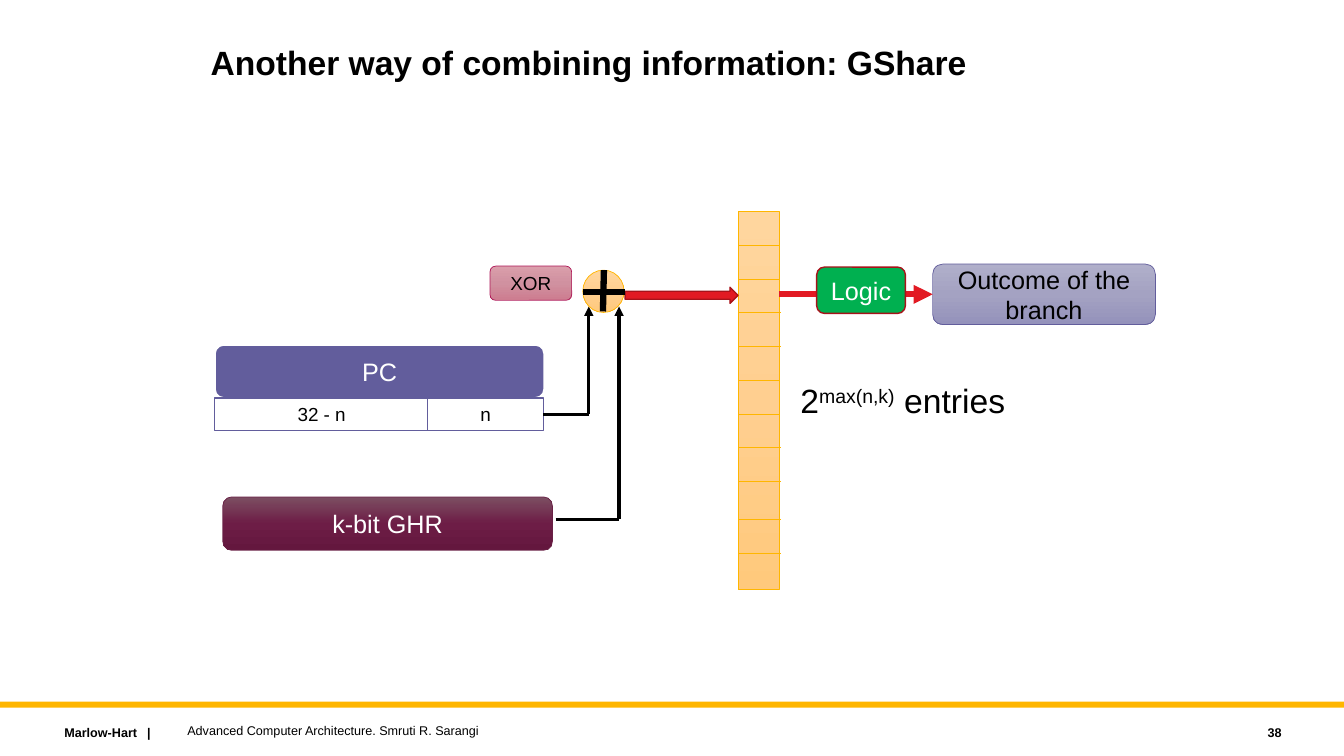
from copy import deepcopy

from lxml.etree import SubElement
from pptx import Presentation
from pptx.dml.color import RGBColor
from pptx.enum.shapes import MSO_CONNECTOR as CONN, MSO_SHAPE as SHAPE
from pptx.enum.text import MSO_ANCHOR as ANCHOR, PP_ALIGN as ALIGN
from pptx.oxml.ns import qn
from pptx.util import Inches, Pt

THEME = {
    "font": "Arial",
    "black": "000000", "white": "FFFFFF", "gold": "FFB600", "violet": "625D9C",
    "red": "E21A23", "dark_red": "A7131A", "green": "00B050",
    "plum": "692146", "pink": "AF1858",
    "gold_fade": ("FFD69E", "FFCF90", "FFC97C"),
    "violet_fade": ("B0AFCA", "A4A2C2", "9492BB"),
    "plum_fade": ("7C4F62", "6D1D46", "64173E"),
    "pink_fade": ("DA9EAB", "D091A0", "CD7C8F"),
    "title": 24, "label": 18, "small": 13.5, "footer": 9,
}


def add_box(kind, at, fill, line=None, width=0.5, text="", size="label", color="black"):
    s = slide.shapes.add_shape(kind, *map(Inches, at))
    s.shadow.inherit = False
    if isinstance(THEME[fill], tuple):
        s.fill.gradient()
        s.fill.gradient_angle = 270
        stop_list = s._element.spPr.find(".//" + qn("a:gsLst"))
        stop_list.insert(1, deepcopy(stop_list[0]))
        for stop, shade, place in zip(s.fill.gradient_stops, THEME[fill], (0, 0.5, 1)):
            stop.color.rgb = RGBColor.from_string(shade)
            stop.position = place
    else:
        s.fill.solid()
        s.fill.fore_color.rgb = RGBColor.from_string(THEME[fill])
    if line:
        s.line.color.rgb = RGBColor.from_string(THEME[line])
        s.line.width = Pt(width)
    else:
        s.line.fill.background()
    if text:
        tf = s.text_frame
        tf.word_wrap = True
        tf.vertical_anchor = ANCHOR.MIDDLE
        p = tf.paragraphs[0]
        p.text = text
        p.alignment = ALIGN.CENTER
        p.font.name = THEME["font"]
        p.font.size = Pt(THEME[size])
        p.font.color.rgb = RGBColor.from_string(THEME[color])
    return s


def add_line(start, end, color="black", width=2.25, arrow=False):
    c = slide.shapes.add_connector(CONN.STRAIGHT, *map(Inches, start + end))
    c.line.color.rgb = RGBColor.from_string(THEME[color])
    c.line.width = Pt(width)
    if arrow:
        SubElement(c.line._get_or_add_ln(), qn("a:tailEnd"), type="triangle")
    SubElement(c._element.spPr, qn("a:effectLst"))
    return c


prs = Presentation()
prs.slide_width, prs.slide_height = Inches(13.33), Inches(7.5)
slide = prs.slides.add_slide(prs.slide_layouts[6])

add_box(SHAPE.RECTANGLE, (0, 6.96, 13.33, 0.06), "gold")

add_box(SHAPE.ROUNDED_RECTANGLE, (2.13, 3.42, 3.27, 0.53), "violet", "white", 1.5,
        "PC", color="white")
add_box(SHAPE.RECTANGLE, (2.13, 3.95, 2.12, 0.32), "white", "violet", 1, "32 - n", "small")
low_bits = add_box(SHAPE.RECTANGLE, (4.24, 3.95, 1.15, 0.32), "white", "violet", 1,
                   "n", "small")

add_box(SHAPE.RECTANGLE, (7.32, 2.1, 0.41, 3.75), "gold_fade", "gold")
for x, rows in ((7.32, (2.43, 2.77, 3.77, 4.11)),
                (7.33, (3.1, 3.44, 4.44, 4.78, 5.15, 5.49))):
    for y in rows:
        add_line((x, y), (x + 0.42, y), "gold", 0.5)

outcome = add_box(SHAPE.ROUNDED_RECTANGLE, (9.25, 2.62, 2.21, 0.6), "violet_fade", "violet",
                  text="Outcome of the branch")
add_line((7.73, 2.92), (9.25, 2.92), "red", 4.5, True).end_connect(outcome, 1)
add_box(SHAPE.ROUNDED_RECTANGLE, (2.21, 4.93, 3.27, 0.53), "plum_fade", "plum",
        text="k-bit GHR", color="white")
add_box(SHAPE.ROUNDED_RECTANGLE, (8.1, 2.65, 0.88, 0.46), "green", "dark_red", 1,
        "Logic", color="white")

add_line((5.39, 4.11), (5.84, 4.11)).begin_connect(low_bits, 3)
add_line((5.84, 4.11), (5.84, 3.04), arrow=True)
add_line((6.14, 5.15), (6.14, 3.04), arrow=True)
add_line((5.51, 5.15), (6.14, 5.15))

add_box(SHAPE.RIGHT_ARROW, (6.2, 2.85, 1.12, 0.16), "red", "dark_red", 1)
add_box(SHAPE.OVAL, (5.78, 2.68, 0.41, 0.42), "gold_fade", "gold")
add_line((5.78, 2.9), (6.2, 2.9), width=4.5)
add_line((5.99, 2.68), (5.98, 3.09), width=4.5)
add_box(SHAPE.ROUNDED_RECTANGLE, (4.86, 2.64, 0.81, 0.34), "pink_fade", "pink",
        text="XOR", size="small")

texts = (
    ((1.99, 0.41, 8.62, 1.09), ("Another way of combining information: GShare",),
     "title", True, ANCHOR.TOP, ALIGN.LEFT),
    ((7.84, 3.72, 2.37, 0.5), ("2", "max(n,k)", " entries"),
     "title", False, ANCHOR.TOP, ALIGN.LEFT),
    ((0.54, 7.14, 2.27, 0.25), ("Marlow-Hart\t|",),
     "footer", True, ANCHOR.TOP, ALIGN.LEFT),
    ((1.76, 7.12, 8, 0.25), ("Advanced Computer Architecture. Smruti R. Sarangi",),
     "footer", False, ANCHOR.MIDDLE, ALIGN.LEFT),
    ((11.41, 7.14, 1.4, 0.25), ("38",), "footer", True, ANCHOR.MIDDLE, ALIGN.RIGHT),
)
for at, parts, size, bold, anchor, align in texts:
    tf = slide.shapes.add_textbox(*map(Inches, at)).text_frame
    tf.word_wrap = len(parts) == 1
    tf.vertical_anchor = anchor
    p = tf.paragraphs[0]
    p.alignment = align
    if "\t" in parts[0]:
        tabs = SubElement(p._p.get_or_add_pPr(), qn("a:tabLst"))
        SubElement(tabs, qn("a:tab"), pos=str(Inches(0.82)), algn="l")
    if size == "title" and bold:
        p.line_spacing = 0.9
    for i, part in enumerate(parts):
        r = p.add_run()
        r.text = part
        r.font.name = THEME["font"]
        r.font.size = Pt(THEME[size])
        r.font.bold = bold
        r.font.color.rgb = RGBColor.from_string(THEME["black"])
        if i == 1:
            r.font._element.set("baseline", "30000")

prs.save("out.pptx")
